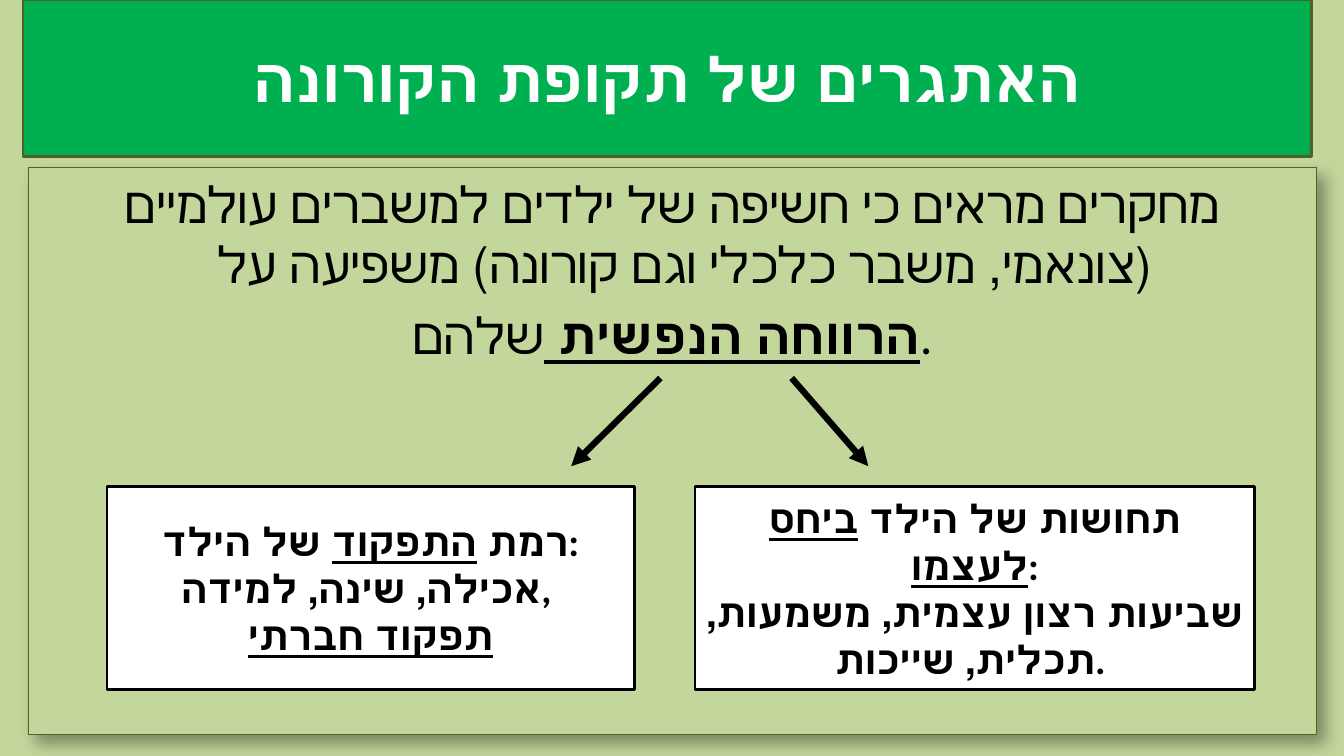
from dataclasses import dataclass

from lxml.etree import SubElement
from pptx import Presentation
from pptx.dml.color import RGBColor as RGB
from pptx.enum.shapes import MSO_CONNECTOR as Link, MSO_SHAPE as Form
from pptx.enum.text import MSO_ANCHOR as Anchor, PP_ALIGN as Align
from pptx.oxml.ns import qn
from pptx.util import Pt

PX = 9525  # EMU in one px, 96 px to the inch
FONT = "Calibri"
HANG = 36  # px
BLACK = RGB(0, 0, 0)
WHITE = RGB(255, 255, 255)
GREEN = RGB(0, 176, 80)
OLIVE = RGB(79, 98, 40)
PALE = RGB(195, 214, 155)


@dataclass
class Run:
    text: str
    bold: bool = True
    under: bool = False


@dataclass
class Box:
    left: int
    top: int
    width: int
    height: int
    fill: RGB
    edge: RGB
    line: float
    size: int
    ink: RGB
    paras: list[list[Run]]
    body: bool = False


@dataclass
class Arrow:
    start: tuple[int, int]
    end: tuple[int, int]


TITLE = Box(22, 0, 1227, 149, GREEN, OLIVE, 2, 44, WHITE,
            [[Run("האתגרים של תקופת הקורונה")]])
BODY = Box(27, 160, 1227, 540, PALE, OLIVE, 0.75, 36, BLACK, [
    [Run("מחקרים מראים כי חשיפה של ילדים למשברים עולמיים "
         "(צונאמי, משבר כלכלי וגם קורונה) משפיעה על ", bold=False)],
    [Run("הרווחה הנפשית ", under=True), Run("שלהם.", bold=False)],
], body=True)
SELF = Box(662, 463, 533, 194, WHITE, BLACK, 2, 28, BLACK, [
    [Run("תחושות של הילד "), Run("ביחס לעצמו", under=True), Run(":")],
    [Run("שביעות רצון עצמית, משמעות, תכלית, שייכות. ")],
])
SKILL = Box(102, 463, 502, 194, WHITE, BLACK, 2, 28, BLACK, [
    [Run("רמת "), Run("התפקוד", under=True), Run(" של הילד:")],
    [Run("אכילה, שינה, למידה, ")],
    [Run("תפקוד חברתי", under=True)],
])
ARROWS = [Arrow((754, 360), (827, 444)), Arrow((629, 360), (544, 444))]


def add_run(para, item: Run, box: Box) -> None:
    run = para.add_run()
    run.text = item.text
    font = run.font
    font.name, font.size = FONT, Pt(box.size)
    font.bold, font.underline = item.bold, item.under
    font.color.rgb = box.ink


def add_shade(shape) -> None:
    """Soft shadow to the lower right."""
    shape.shadow.inherit = False
    effects = shape._element.spPr.find(qn("a:effectLst"))
    shade = SubElement(effects, qn("a:outerShdw"), blurRad=str(Pt(10.2)),
                       dist=str(Pt(8)), dir=str(45 * 60000), algn="tl")
    color = SubElement(shade, qn("a:srgbClr"), val=str(BLACK))
    SubElement(color, qn("a:alpha"), val="35000")


def add_box(slide, box: Box) -> None:
    shape = slide.shapes.add_shape(
        Form.RECTANGLE, box.left * PX, box.top * PX,
        box.width * PX, box.height * PX)
    shape.fill.solid()
    shape.fill.fore_color.rgb = box.fill
    shape.line.color.rgb = box.edge
    shape.line.width = Pt(box.line)
    if box.body:
        add_shade(shape)
    else:
        shape.shadow.inherit = False

    frame = shape.text_frame
    frame.word_wrap = True
    frame.vertical_anchor = Anchor.TOP if box.body else Anchor.MIDDLE
    for i, runs in enumerate(box.paras):
        para = frame.add_paragraph() if i else frame.paragraphs[0]
        para.alignment = Align.CENTER
        if box.body:
            props = para._p.get_or_add_pPr()
            props.set("marL", str(HANG * PX))
            props.set("indent", str(-HANG * PX))
            para.space_before = Pt(box.size * 0.2)
        for item in runs:
            add_run(para, item, box)


def add_arrow(slide, arrow: Arrow) -> None:
    ends = [n * PX for n in arrow.start + arrow.end]
    link = slide.shapes.add_connector(Link.STRAIGHT, *ends)
    link.line.color.rgb = BLACK
    link.line.width = Pt(4.5)
    SubElement(link.line._get_or_add_ln(), qn("a:tailEnd"), type="triangle")
    SubElement(link._element.spPr, qn("a:effectLst"))


def main() -> None:
    deck = Presentation()
    deck.slide_width, deck.slide_height = 1280 * PX, 720 * PX
    slide = deck.slides.add_slide(deck.slide_layouts[6])
    slide.background.fill.solid()
    slide.background.fill.fore_color.rgb = PALE

    # Title and main panel
    add_box(slide, TITLE)
    add_box(slide, BODY)

    # Arrows to the two effects
    for arrow in ARROWS:
        add_arrow(slide, arrow)
    for box in (SELF, SKILL):
        add_box(slide, box)

    deck.save("out.pptx")


if __name__ == "__main__":
    main()
